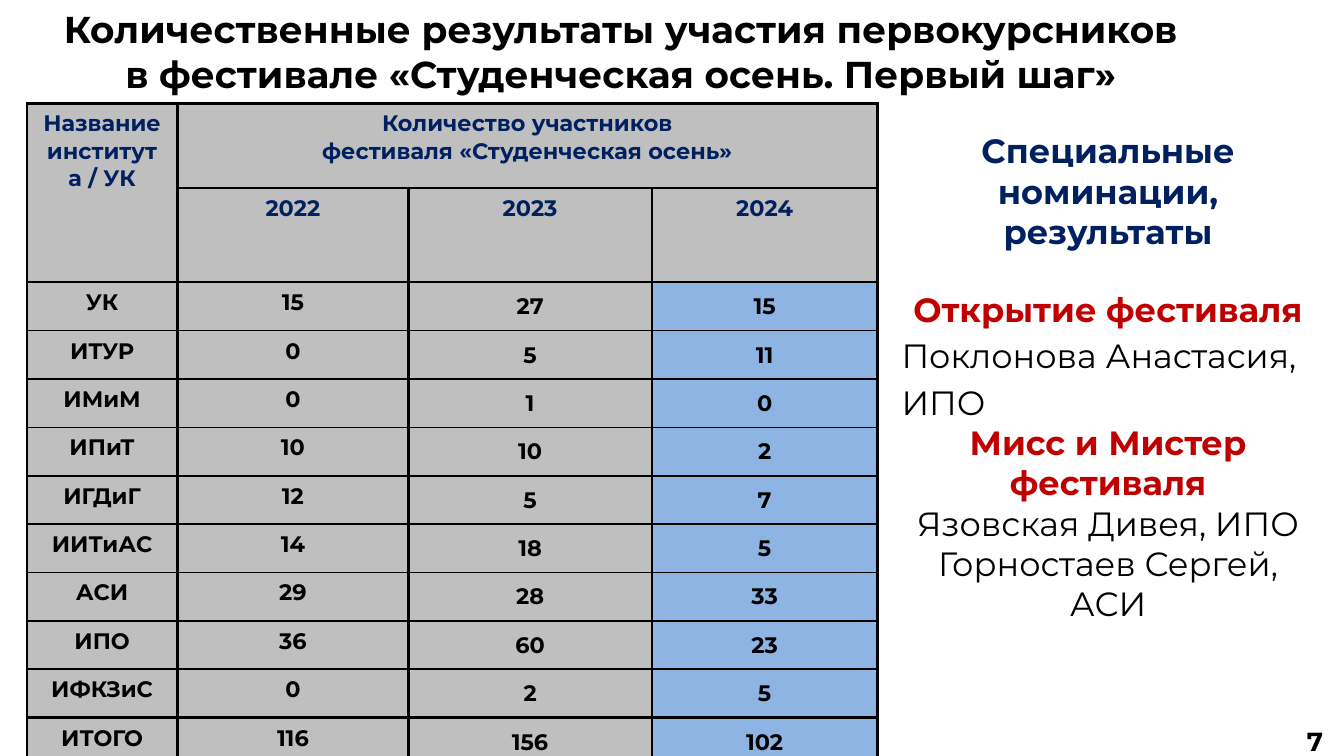
from lxml.etree import SubElement
from pptx import Presentation
from pptx.dml.color import RGBColor as Color
from pptx.enum.text import PP_ALIGN as Align
from pptx.oxml.ns import qn
from pptx.util import Inches, Pt

INK, NAVY, RED = "000000", "002060", "C00000"
GRAY, BLUE = "BFBFBF", "8EB4E3"
WIDTHS = [1.12, 1.72, 1.81, 1.68]
HEIGHTS = [0.63, 0.33] + [0.36] * 9 + [0.39]
HEAD = [
    ["Название института / УК", "Количество участников\nфестиваля «Студенческая осень»", "", ""],
    ["", "2022", "2023", "2024"],
]
DATA = [
    ["УК", 15, 27, 15],
    ["ИТУР", 0, 5, 11],
    ["ИМиМ", 0, 1, 0],
    ["ИПиТ", 10, 10, 2],
    ["ИГДиГ", 12, 5, 7],
    ["ИИТиАС", 14, 18, 5],
    ["АСИ", 29, 28, 33],
    ["ИПО", 36, 60, 23],
    ["ИФКЗиС", 0, 2, 5],
    ["ИТОГО", 116, 156, 102],
]


def paint(code):
    """Turn a hex string into a colour."""
    return Color.from_string(code)


def write(frame, text, size=12, color=INK, bold=True, align=Align.CENTER, lead=None, gap=None):
    """Add each line of text to the frame as a formatted paragraph."""
    for line in text.split("\n"):
        para = frame.paragraphs[0]
        if para.runs:
            para = frame.add_paragraph()
        para.alignment = align
        if lead:
            para.line_spacing = lead
        if gap:
            para.space_before = Pt(gap)
        run = para.add_run()
        run.text = line
        font = run.font
        font.name, font.size, font.bold = "Montserrat", Pt(size), bold
        font.color.rgb = paint(color)


def add_box(slide, left, top, width, height):
    """Add a wrapping text box and return its frame."""
    box = slide.shapes.add_textbox(Inches(left), Inches(top), Inches(width), Inches(height))
    box.text_frame.word_wrap = True
    return box.text_frame


def rule_cell(cell, **sides):
    """Draw black borders with the given point width for each side."""
    props = cell._tc.get_or_add_tcPr()
    for side, width in sides.items():
        line = SubElement(props, qn(f"a:ln{side}"), w=str(Pt(width)))
        fill = SubElement(line, qn("a:solidFill"))
        SubElement(fill, qn("a:srgbClr"), val=INK)


def add_grid(slide):
    """Add the table of participants by institute and year."""
    rows = HEAD + DATA
    last = len(rows) - 1
    shape = slide.shapes.add_table(
        len(rows), len(WIDTHS), Inches(0.2), Inches(0.77),
        Inches(sum(WIDTHS)), Inches(sum(HEIGHTS)))
    grid = shape.table
    for col, width in zip(grid.columns, WIDTHS):
        col.width = Inches(width)
    for row, height in zip(grid.rows, HEIGHTS):
        row.height = Inches(height)
    grid.cell(0, 0).merge(grid.cell(1, 0))
    grid.cell(0, 1).merge(grid.cell(0, 3))
    for r, row in enumerate(rows):
        head = r < len(HEAD)
        top = 1.5 if r <= len(HEAD) or r == last else 1
        base = 1.5 if head or r >= last - 1 else 1
        for c, value in enumerate(row):
            cell = grid.cell(r, c)
            rule_cell(cell, L=1.5, R=1.5, T=top, B=base)
            cell.fill.solid()
            cell.fill.fore_color.rgb = paint(BLUE if c == 3 and not head else GRAY)
            if value != "":
                write(cell.text_frame, str(value), color=NAVY if head else INK,
                      lead=1.15 if c > 1 and not head else None)


def add_side(slide):
    """Add the list of special nominations."""
    frame = add_box(slide, 6.61, 0.92, 3.27, 4.04)
    write(frame, "Специальные номинации, результаты", size=18, color=NAVY)
    write(frame, "Открытие фестиваля", size=18, color=RED, lead=1.15, gap=17)
    write(frame, "Поклонова Анастасия, ИПО", size=18, bold=False, align=Align.LEFT, lead=1.15)
    write(frame, "Мисс и Мистер фестиваля", size=18, color=RED)
    write(frame, "Язовская Дивея, ИПО\nГорностаев Сергей, АСИ", size=18, bold=False)


def main():
    """Build and save the slide."""
    deck = Presentation()
    deck.slide_width = Inches(10)
    deck.slide_height = Inches(10 * 9 / 16)
    slide = deck.slides.add_slide(deck.slide_layouts[6])
    title = add_box(slide, 0.13, 0, 8.98, 0.77)
    write(title, "Количественные результаты участия первокурсников\n"
                 "в фестивале «Студенческая осень. Первый шаг»", size=20)
    write(add_box(slide, 9.57, 5.35, 0.43, 0.29), "7", size=14)
    add_grid(slide)
    add_side(slide)
    deck.save("out.pptx")


if __name__ == "__main__":
    main()
